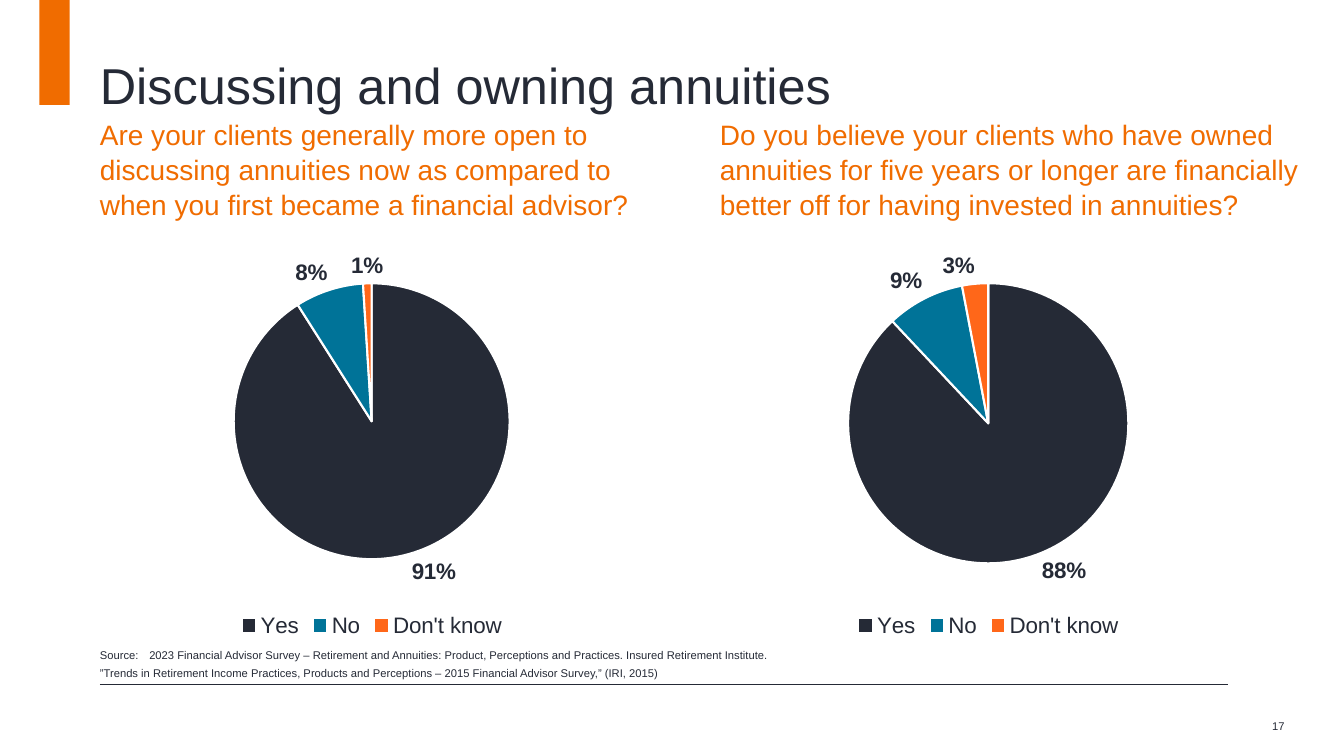
from lxml import etree
from pptx import Presentation
from pptx.chart.data import CategoryChartData
from pptx.dml.color import RGBColor
from pptx.enum.chart import XL_CHART_TYPE as ChartType
from pptx.enum.chart import XL_LABEL_POSITION as LabelPosition
from pptx.enum.chart import XL_LEGEND_POSITION as LegendPosition
from pptx.enum.shapes import MSO_CONNECTOR as Connector
from pptx.enum.shapes import MSO_SHAPE as Shape
from pptx.enum.text import MSO_ANCHOR as Anchor
from pptx.enum.text import PP_ALIGN as Align
from pptx.oxml import parse_xml
from pptx.oxml.ns import nsdecls, qn
from pptx.util import Inches, Pt

COLORS = {
    "ink": "252A36",
    "orange": "F06C00",
    "teal": "007398",
    "bright_orange": "FF6719",
    "white": "FFFFFF",
}
FONT = "Arial"
LEFT = 0.99
CONTENT_WIDTH = 11.19
CHART_TOP, CHART_HEIGHT = 2.37, 4
ANSWERS = ["Yes", "No", "Don't know"]
ANSWER_COLORS = ["ink", "teal", "bright_orange"]
SOURCES = [
    "Source:\t2023 Financial Advisor Survey – Retirement and Annuities: "
    "Product, Perceptions and Practices. Insured Retirement Institute.",
    "”Trends in Retirement Income Practices, Products and Perceptions – "
    "2015 Financial Advisor Survey,” (IRI, 2015)",
]
# question, question left, chart left, chart width, pie diameter, shares
SURVEYS = [
    ("Are your clients generally more open to discussing annuities now as "
     "compared to when you first became a financial advisor?",
     LEFT, 0.36, 6.66, 2.74, [0.91, 0.08, 0.01]),
    ("Do you believe your clients who have owned annuities for five years or "
     "longer are financially better off for having invested in annuities?",
     7.14, 6.61, 6.39, 2.78, [0.88, 0.09, 0.03]),
]


def color(name):
    return RGBColor.from_string(COLORS[name])


def style_font(font, size, name="ink", bold=False):
    font.name = FONT
    font.size = Pt(size)
    font.bold = bold
    font.color.rgb = color(name)


def add_text(page, place, lines, size, name="ink", anchor=Anchor.TOP,
             align=Align.LEFT, spacing=1.0):
    """Add a wrapped text box without insets, one paragraph per line."""
    box = page.shapes.add_textbox(*map(Inches, place))
    frame = box.text_frame
    frame.word_wrap = True
    frame.vertical_anchor = anchor
    frame.margin_left = frame.margin_right = 0
    frame.margin_top = frame.margin_bottom = 0
    for index, line in enumerate(lines):
        para = frame.paragraphs[0] if index == 0 else frame.add_paragraph()
        para.text = line
        para.alignment = align
        para.line_spacing = spacing
        style_font(para.font, size, name)
    return frame


def add_sources(page):
    frame = add_text(page, (LEFT, 6.35, CONTENT_WIDTH, 0.43), SOURCES, 8,
                     anchor=Anchor.BOTTOM, spacing=1.1)
    frame.margin_bottom = Inches(0.04)
    for para in frame.paragraphs:
        para.space_after = Pt(2)
        properties = para._p.get_or_add_pPr()
        properties.set("marL", str(Inches(0.49)))
        properties.set("indent", str(-Inches(0.49)))


def add_accent_bar(page):
    bar = page.shapes.add_shape(Shape.RECTANGLE, Inches(0.39), 0,
                                Inches(0.3), Inches(1.04))
    bar.shadow.inherit = False
    bar.fill.solid()
    bar.fill.fore_color.rgb = color("orange")
    bar.line.fill.background()


def add_footer_rule(page):
    rule = page.shapes.add_connector(
        Connector.STRAIGHT, Inches(LEFT), Inches(6.79),
        Inches(LEFT + CONTENT_WIDTH), Inches(6.79))
    rule.line.color.rgb = color("ink")
    rule.line.width = Pt(0.5)
    etree.SubElement(rule._element.spPr, qn("a:effectLst"))


def place_pie(chart, width, diameter):
    """Fix the pie's size, centred across the chart area."""
    area = {
        "x": (width - diameter) / 2 / width,
        "y": 0.11,
        "w": diameter / width,
        "h": diameter / CHART_HEIGHT,
    }
    values = "".join(f'<c:{key} val="{value:.3f}"/>'
                     for key, value in area.items())
    layout = parse_xml(
        f'<c:layout {nsdecls("c")}><c:manualLayout>'
        '<c:layoutTarget val="inner"/>'
        '<c:xMode val="edge"/><c:yMode val="edge"/>'
        f'{values}</c:manualLayout></c:layout>')
    plot_area = chart._chartSpace.chart.plotArea
    for old in plot_area.findall(qn("c:layout")):
        plot_area.remove(old)
    plot_area.insert(0, layout)


def add_pie(page, left, width, diameter, shares):
    data = CategoryChartData(number_format="0%")
    data.categories = ANSWERS
    data.add_series("Series 1", shares)
    chart = page.shapes.add_chart(
        ChartType.PIE, Inches(left), Inches(CHART_TOP), Inches(width),
        Inches(CHART_HEIGHT), data).chart
    chart.has_title = False
    style_font(chart.font, 16)
    chart.has_legend = True
    chart.legend.position = LegendPosition.BOTTOM
    chart.legend.include_in_layout = False
    style_font(chart.legend.font, 16)

    plot = chart.plots[0]
    plot.vary_by_categories = True
    plot.has_data_labels = True
    labels = plot.data_labels
    labels.show_value = True
    labels.show_percentage = False
    labels.number_format = "0%"
    labels.number_format_is_linked = False
    labels.position = LabelPosition.OUTSIDE_END
    style_font(labels.font, 16, bold=True)
    for index, name in enumerate(ANSWER_COLORS):
        piece = plot.series[0].points[index].format
        piece.fill.solid()
        piece.fill.fore_color.rgb = color(name)
        piece.line.color.rgb = color("white")
        piece.line.width = Pt(1.5)
    place_pie(chart, width, diameter)


def main():
    deck = Presentation()
    deck.slide_width = Inches(13.33)
    deck.slide_height = Inches(7.5)
    page = deck.slides.add_slide(deck.slide_layouts[6])
    add_text(page, (12.23, 7, 0.51, 0.4), ["17"], 8,
             anchor=Anchor.MIDDLE, align=Align.RIGHT)
    add_accent_bar(page)
    add_footer_rule(page)
    add_text(page, (LEFT, 0.43, CONTENT_WIDTH, 0.71),
             ["Discussing and owning annuities"], 36, anchor=Anchor.BOTTOM)
    add_sources(page)
    for question, text_left, left, width, diameter, shares in SURVEYS:
        add_text(page, (text_left, 1.15, 5.79, 0.39), [question], 20,
                 "orange", spacing=1.04)
        add_pie(page, left, width, diameter, shares)
    deck.save("out.pptx")


if __name__ == "__main__":
    main()
